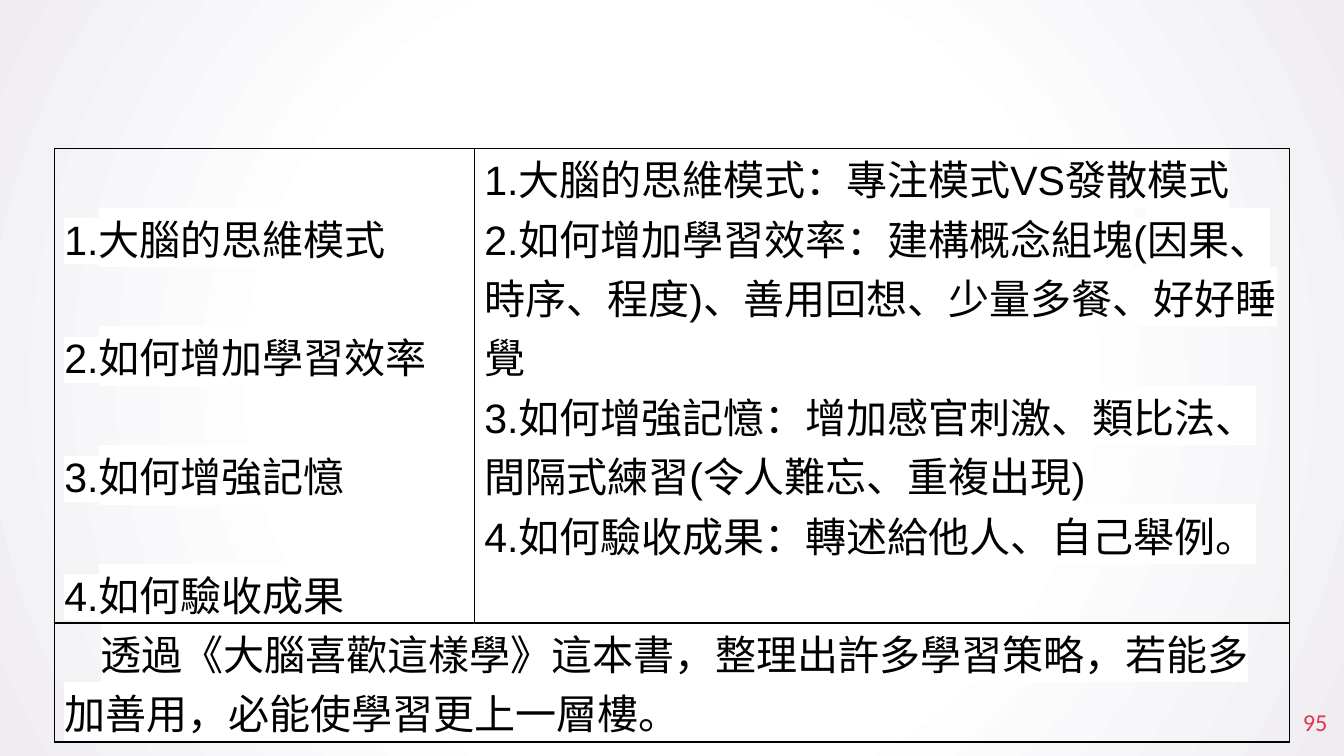
from lxml.etree import SubElement
from pptx import Presentation
from pptx.dml.color import RGBColor
from pptx.enum.text import MSO_ANCHOR, PP_ALIGN
from pptx.oxml.ns import qn
from pptx.util import Pt

PX = 9525
RIGHT = PP_ALIGN.RIGHT
MIDDLE = MSO_ANCHOR.MIDDLE
COLORS = {"ink": "000000", "white": "FFFFFF", "edge": "EFEDF1", "page": "E63350"}

TOPICS = ["1.大腦的思維模式", "2.如何增加學習效率", "3.如何增強記憶", "4.如何驗收成果"]
DETAILS = [
    "1.大腦的思維模式：專注模式VS發散模式",
    "2.如何增加學習效率：建構概念組塊(因果、時序、程度)、善用回想、少量多餐、好好睡覺",
    "3.如何增強記憶：增加感官刺激、類比法、間隔式練習(令人難忘、重複出現)",
    "4.如何驗收成果：轉述給他人、自己舉例。",
]
CLOSING = ["透過《大腦喜歡這樣學》這本書，整理出許多學習策略，若能多加善用，必能使學習更上一層樓。"]


def px(n):
    return n * PX


def rgb(name):
    return RGBColor.from_string(COLORS[name])


def style(run, face, size, color):
    run.font.name = face
    run.font.size = Pt(size)
    run.font.color.rgb = rgb(color)


def mark(run):
    props = run.font._element
    light = SubElement(props, qn("a:highlight"))
    SubElement(light, qn("a:srgbClr"), val=COLORS["white"])
    props.find(qn("a:solidFill")).addnext(light)


def frame(cell):
    props = cell._tc.get_or_add_tcPr()
    for side in ("lnL", "lnR", "lnT", "lnB"):
        line = SubElement(props, qn("a:" + side), w=str(Pt(0.75)))
        fill = SubElement(line, qn("a:solidFill"))
        SubElement(fill, qn("a:srgbClr"), val=COLORS["ink"])
    cell.fill.background()


def write(cell, lines, space=1, indent=0):
    cell.margin_left = cell.margin_right = px(7)
    cell.margin_top = cell.margin_bottom = 0
    cell.text_frame.text = "\n".join(lines)
    for para in cell.text_frame.paragraphs:
        para.line_spacing = space
        if indent:
            props = para._p.get_or_add_pPr()
            props.set("marL", "0")
            props.set("indent", str(px(indent)))
        for run in para.runs:
            style(run, "Arial", 22, "ink")
            mark(run)


def backdrop(slide):
    fill = slide.background.fill
    fill.gradient()
    for stop, place, name in zip(fill.gradient_stops, (0.5, 1), ("white", "edge")):
        stop.position = place
        stop.color.rgb = rgb(name)
    grad = slide.background._cSld.find(".//" + qn("a:gradFill"))
    grad.remove(grad.find(qn("a:lin")))
    shade = SubElement(grad, qn("a:path"), path="circle")
    SubElement(shade, qn("a:fillToRect"), l="50000", t="50000", r="50000", b="50000")
    grad.find(qn("a:gsLst")).addnext(shade)


def summary(slide, left, top, cols, rows):
    box = (left, top, sum(cols), sum(rows))
    table = slide.shapes.add_table(len(rows), len(cols), *map(px, box)).table
    table.first_row = table.horz_banding = False
    for col, width in zip(table.columns, cols):
        col.width = px(width)
    for row, height in zip(table.rows, rows):
        row.height = px(height)
    for cell in table.iter_cells():
        frame(cell)
    table.cell(1, 0).merge(table.cell(1, 1))
    write(table.cell(0, 0), TOPICS, space=2)
    write(table.cell(0, 1), DETAILS)
    write(table.cell(1, 0), CLOSING, indent=26)


def number(slide, left, top, width, height):
    text = slide.shapes.add_textbox(*map(px, (left, top, width, height))).text_frame
    text.word_wrap = True
    text.margin_left = text.margin_right = text.margin_top = text.margin_bottom = 0
    text.vertical_anchor = MIDDLE
    text.text = "95"
    para = text.paragraphs[0]
    para.alignment = RIGHT
    style(para.runs[0], "Calibri", 13, "page")


def main():
    deck = Presentation()
    deck.slide_width, deck.slide_height = px(960), px(540)
    slide = deck.slides.add_slide(deck.slide_layouts[6])
    backdrop(slide)
    number(slide, 890, 495, 58, 41)
    summary(slide, 39, 106, (300, 582), (339, 85))
    deck.save("out.pptx")


if __name__ == "__main__":
    main()
